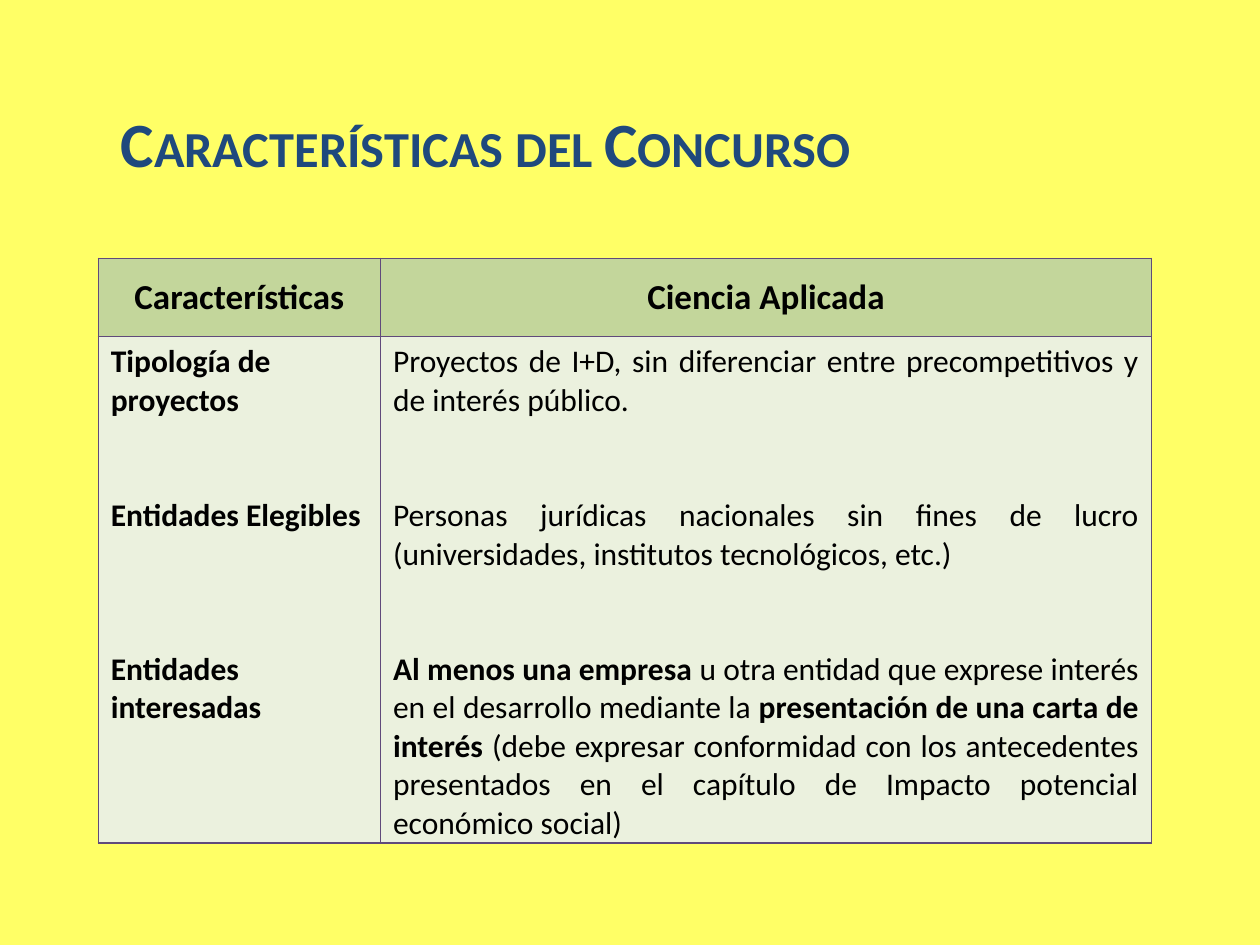
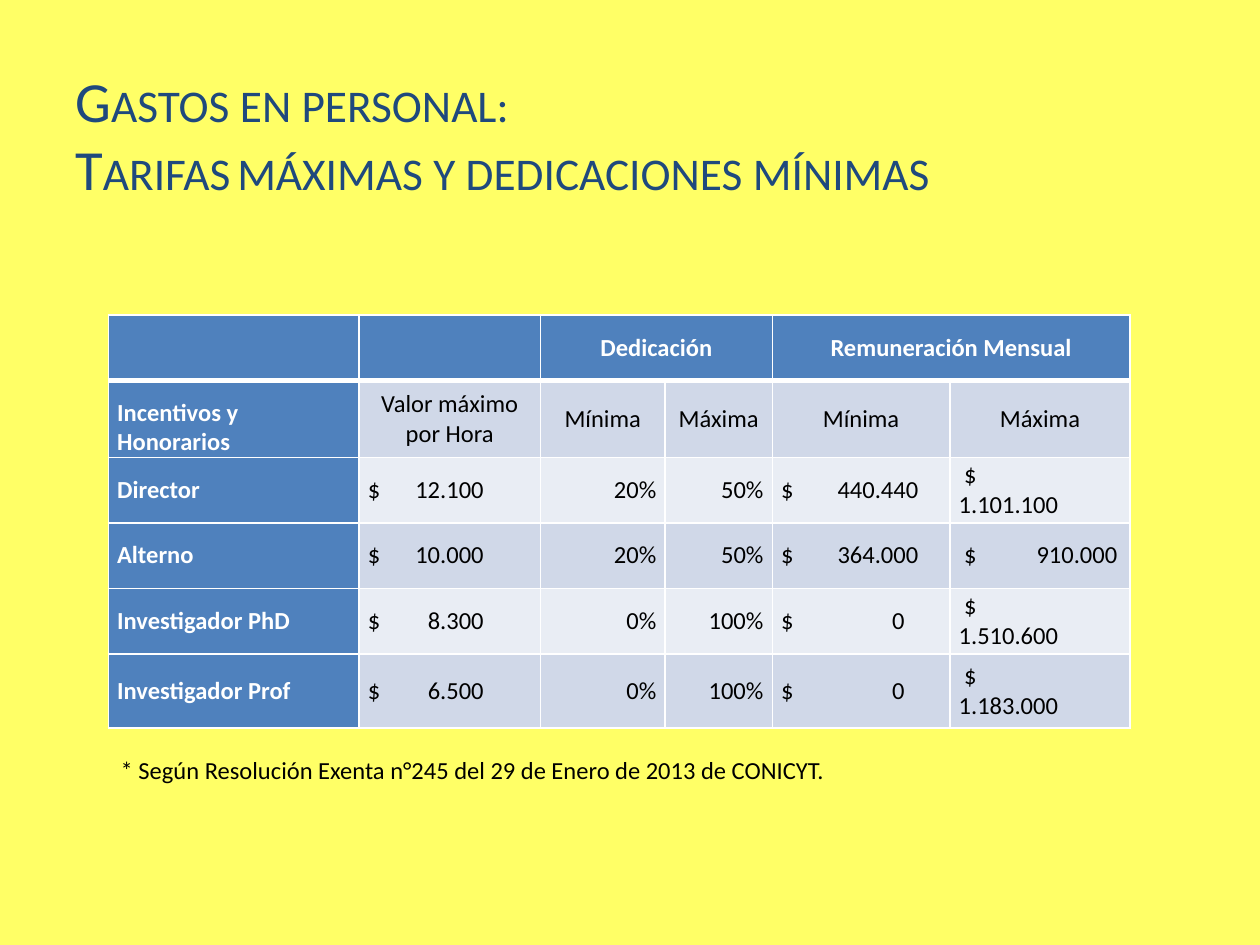
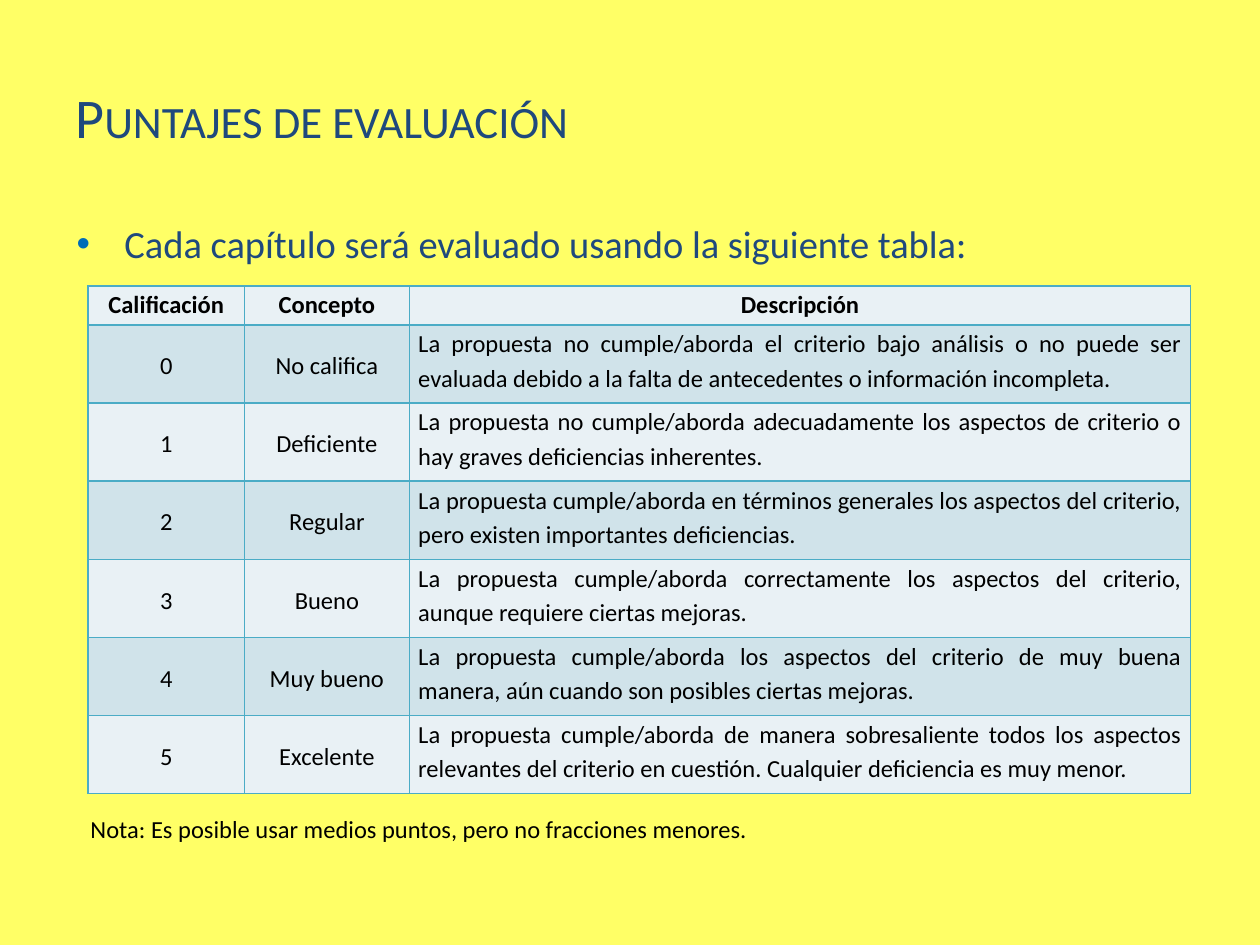
import dataclasses

import pptx
import pptx.dml.color
import pptx.enum.text
import pptx.oxml.ns
import pptx.util
from lxml import etree

Inches = pptx.util.Inches
Pt = pptx.util.Pt
ALIGN = pptx.enum.text.PP_ALIGN
ANCHOR = pptx.enum.text.MSO_ANCHOR


@dataclasses.dataclass(frozen=True)
class Theme:
    font: str = "Calibri"
    gap_font: str = "DejaVu Sans"
    page: str = "FFFF66"
    title: str = "1F497D"
    text: str = "000000"
    white: str = "FFFFFF"
    bullet: str = "006CB7"
    green_head: str = "C3D69B"
    green_body: str = "EBF1DE"
    purple: str = "604A7B"
    blue: str = "4F81BD"
    blue_bands: tuple = ("D0D8E8", "E9EDF4")
    aqua: str = "4BACC6"
    aqua_bands: tuple = ("E9F1F5", "D0E3EA")
    title_size: float = 32
    lead_size: float = 22
    head_size: float = 20
    body_size: float = 18
    small_size: float = 14


THEME = Theme()


@dataclasses.dataclass
class Run:
    text: str
    size: float = THEME.small_size
    color: str = THEME.text
    bold: bool = False
    caps: bool = False
    font: str = THEME.font


@dataclasses.dataclass
class Para:
    """A paragraph; before is in points, tab is a right tab stop in inches."""
    runs: list
    align: object = ALIGN.LEFT
    before: float = 0
    line: float = 1
    tab: float = 0
    bullet: bool = False


@dataclasses.dataclass
class Cell:
    paras: list
    fill: str
    anchor: object = ANCHOR.MIDDLE


def rgb(code):
    return pptx.dml.color.RGBColor.from_string(code)


def node(parent, tag, **attrs):
    return etree.SubElement(parent, pptx.oxml.ns.qn("a:" + tag), attrs)


def add_run(para, item):
    """Add the text of a run, with a line break at each newline."""
    for i, text in enumerate(item.text.split("\n")):
        if i:
            para.add_line_break()
        run = para.add_run()
        run.text = text
        font = run.font
        font.name, font.size, font.bold = item.font, Pt(item.size), item.bold
        font.color.rgb = rgb(item.color)
        if item.caps:
            run._r.get_or_add_rPr().set("cap", "small")


def write(frame, paras):
    frame.word_wrap = True
    for i, item in enumerate(paras):
        para = frame.add_paragraph() if i else frame.paragraphs[0]
        props = para._p.get_or_add_pPr()
        if item.bullet:
            props.set("marL", str(Inches(0.38)))
            props.set("indent", str(-Inches(0.38)))
            node(node(props, "buClr"), "srgbClr", val=THEME.bullet)
            node(props, "buFont", typeface="Arial")
            node(props, "buChar", char="•")
        if item.tab:
            node(node(props, "tabLst"), "tab", pos=str(Inches(item.tab)), algn="r")
        para.alignment = item.align
        para.line_spacing = item.line
        if item.before:
            para.space_before = Pt(item.before)
        for run in item.runs:
            add_run(para, run)


def add_text(slide, box, paras, anchor=ANCHOR.TOP):
    frame = slide.shapes.add_textbox(*map(Inches, box)).text_frame
    frame.vertical_anchor = anchor
    write(frame, paras)


def add_title(slide, top, runs):
    add_text(slide, (0.5, top, 7.81, 1.25), [Para(runs)], ANCHOR.MIDDLE)


def title_run(text, size=THEME.title_size, bold=False):
    return Run(text, size, THEME.title, bold, caps=True)


def set_edges(cell, color, widths):
    props = cell._tc.get_or_add_tcPr()
    for side, width in zip("LRTB", widths):
        line = node(props, "ln" + side, w=str(Pt(width)))
        node(node(line, "solidFill"), "srgbClr", val=color)


def add_table(slide, spot, cols, rows, cells, edge, rule=1, tight=True):
    """Draw a table; rule is the width of the line under its first row."""
    box = (*spot, sum(cols), sum(rows))
    table = slide.shapes.add_table(len(rows), len(cols), *map(Inches, box)).table
    table.first_row = table.horz_banding = False
    for col, width in zip(table.columns, cols):
        col.width = Inches(width)
    for r, (height, line) in enumerate(zip(rows, cells)):
        table.rows[r].height = Inches(height)
        for c, item in enumerate(line):
            cell = table.cell(r, c)
            set_edges(cell, edge, (1, 1, rule if r == 1 else 1, rule if r == 0 else 1))
            cell.fill.solid()
            cell.fill.fore_color.rgb = rgb(item.fill)
            cell.vertical_anchor = item.anchor
            if tight:
                cell.margin_left = cell.margin_right = Inches(0.07)
                cell.margin_top = cell.margin_bottom = 0
            write(cell.text_frame, item.paras)
    return table


def draw_call(slide):
    add_text(slide, (0.86, 0.78, 7.03, 0.71),
             [Para([title_run("Características del Concurso", 36, True)])])

    def head(text):
        run = Run(text, THEME.head_size, bold=True)
        return Cell([Para([run], ALIGN.CENTER)], THEME.green_head)

    def body(items, align):
        """Each item is the space before it and its (text, bold) pairs."""
        paras = [Para([Run(text, THEME.body_size, bold=bold) for text, bold in runs],
                      align, before) for before, runs in items]
        return Cell(paras, THEME.green_body, ANCHOR.TOP)

    topics = [(0, [("Tipología de proyectos", True)]),
              (44, [("Entidades Elegibles", True)]),
              (66, [("Entidades interesadas", True)])]
    details = [
        (0, [("Proyectos de I+D, sin diferenciar entre precompetitivos y de interés público.", False)]),
        (44, [("Personas jurídicas nacionales sin fines de lucro "
               "(universidades, institutos tecnológicos, etc.)", False)]),
        (44, [("Al menos una empresa ", True),
              ("u otra entidad que exprese interés en el desarrollo mediante la ", False),
              ("presentación de una carta de interés ", True),
              ("(debe expresar conformidad con los antecedentes presentados en el "
               "capítulo de Impacto potencial económico social)", False)])]
    cells = [[head("Características"), head("Ciencia Aplicada")],
             [body(topics, ALIGN.LEFT), body(details, ALIGN.JUSTIFY)]]
    add_table(slide, (0.78, 2.05), (2.24, 6.12), (0.62, 3.91), cells,
              THEME.purple, tight=False)


def draw_costs(slide):
    add_title(slide, 0.44, [
        title_run("Gastos en personal:\nTarifas", 32.4),
        Run(" ", 11.7, font=THEME.gap_font),
        title_run("máximas y dedicaciones mínimas", 32.4)])

    def label(text, align=ALIGN.LEFT, anchor=ANCHOR.MIDDLE):
        run = Run(text, color=THEME.white, bold=True)
        return Cell([Para([run], align)] if text else [], THEME.blue, anchor)

    def plain(text, fill, align=ALIGN.LEFT, tab=0):
        return Cell([Para([Run(text)], align, tab=tab)], fill)

    heads = ["", "", "Dedicación", "", "Remuneración Mensual", ""]
    names = ["Valor máximo por Hora", "Mínima", "Máxima", "Mínima", "Máxima"]
    staff = [
        ("Director", "12.100", "20%", "50%", "440.440", "\u00a0$\n1.101.100"),
        ("Alterno", "10.000", "20%", "50%", "364.000", "\u00a0$\t910.000"),
        ("Investigador PhD", "8.300", "0%", "100%", "0", "\u00a0$\n1.510.600"),
        ("Investigador Prof", "6.500", "0%", "100%", "0", "\u00a0$\n1.183.000")]
    cells = [[label(text, ALIGN.CENTER) for text in heads],
             [label("Incentivos y Honorarios", anchor=ANCHOR.BOTTOM)]
             + [plain(text, THEME.blue_bands[0], ALIGN.CENTER) for text in names]]
    for i, (role, rate, least, most, low, high) in enumerate(staff, 1):
        fill = THEME.blue_bands[i % 2]
        cells.append([label(role),
                      plain("$\t" + rate, fill, tab=0.92),
                      plain(least, fill, ALIGN.RIGHT),
                      plain(most, fill, ALIGN.RIGHT),
                      plain("$\t" + low, fill, tab=0.98 if low == "0" else 1.09),
                      plain(high, fill, tab=1.26 if "\t" in high else 0)])
    table = add_table(slide, (0.86, 2.5), (1.99, 1.44, 0.99, 0.85, 1.41, 1.43),
                      (0.52, 0.61, 0.52, 0.52, 0.52, 0.59), cells, THEME.white, rule=3)
    for col in (2, 4):
        table.cell(0, col).merge(table.cell(0, col + 1))
    note = "* Según Resolución Exenta n°245 del 29 de Enero de 2013 de CONICYT."
    add_text(slide, (0.86, 5.94, 8.13, 0.34), [Para([Run(note)])])


def draw_scores(slide):
    add_title(slide, 0.3, [title_run("Puntajes de evaluación")])
    lead = Run("Cada capítulo será evaluado usando la siguiente tabla:",
               THEME.lead_size, THEME.title)
    add_text(slide, (0.51, 1.7, 9, 0.5), [Para([lead], ALIGN.JUSTIFY, bullet=True)])
    lines = [
        ("Calificación", "Concepto", "Descripción"),
        ("0", "No califica", "La propuesta no cumple/aborda el criterio bajo análisis o no puede "
         "ser evaluada debido a la falta de antecedentes o información incompleta."),
        ("1", "Deficiente", "La propuesta no cumple/aborda adecuadamente los aspectos de criterio "
         "o hay graves deficiencias inherentes."),
        ("2", "Regular", "La propuesta cumple/aborda en términos generales los aspectos del "
         "criterio, pero existen importantes deficiencias."),
        ("3", "Bueno", "La propuesta cumple/aborda correctamente los aspectos del criterio, "
         "aunque requiere ciertas mejoras."),
        ("4", "Muy bueno", "La propuesta cumple/aborda los aspectos del criterio de muy buena "
         "manera, aún cuando son posibles ciertas mejoras."),
        ("5", "Excelente", "La propuesta cumple/aborda de manera sobresaliente todos los aspectos "
         "relevantes del criterio en cuestión. Cualquier deficiencia es muy menor.")]

    def score(r, c, text):
        long = r > 0 and c == 2
        align = ALIGN.JUSTIFY if long else ALIGN.CENTER
        anchor = ANCHOR.TOP if long or r == 0 else ANCHOR.MIDDLE
        para = Para([Run(text, bold=r == 0)], align, line=1.15)
        return Cell([para], THEME.aqua_bands[r % 2], anchor)

    cells = [[score(r, c, text) for c, text in enumerate(line)]
             for r, line in enumerate(lines)]
    add_table(slide, (0.7, 2.27), (1.24, 1.31, 6.2), [0.31] + [0.62] * 6, cells, THEME.aqua)
    note = "Nota: Es posible usar medios puntos, pero no fracciones menores."
    add_text(slide, (0.62, 6.41, 7.5, 0.64), [Para([Run(note)], ALIGN.JUSTIFY)])


def main():
    deck = pptx.Presentation()
    deck.slide_width, deck.slide_height = Inches(10), Inches(7.5)
    fill = deck.slide_master.background.fill
    fill.solid()
    fill.fore_color.rgb = rgb(THEME.page)
    for draw in (draw_call, draw_costs, draw_scores):
        draw(deck.slides.add_slide(deck.slide_layouts[6]))
    deck.save("out.pptx")


if __name__ == "__main__":
    main()
